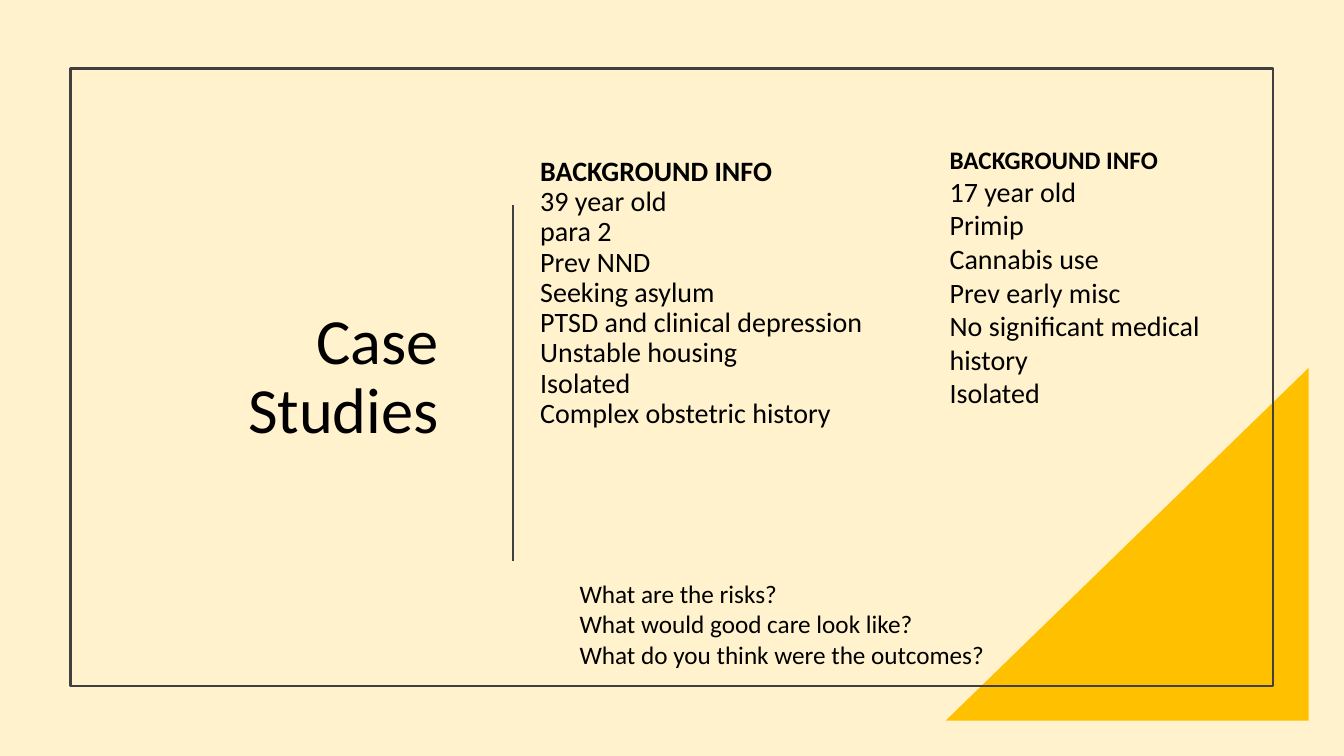
"""Build the Case Studies slide."""
from lxml.etree import SubElement
from pptx import Presentation
from pptx.dml.color import RGBColor
from pptx.enum.shapes import MSO_CONNECTOR, MSO_SHAPE
from pptx.enum.text import MSO_ANCHOR, PP_ALIGN
from pptx.oxml.ns import qn
from pptx.util import Inches, Pt

HUES = {"cream": "FFF2CC", "gold": "FFC000", "gray": "404040", "black": "000000"}
HUE = {name: RGBColor.from_string(code) for name, code in HUES.items()}

deck = Presentation()
deck.slide_width, deck.slide_height = Inches(13.33), Inches(7.5)
slide = deck.slides.add_slide(deck.slide_layouts[6])
slide.background.fill.solid()
slide.background.fill.fore_color.rgb = HUE["cream"]
shapes = slide.shapes


def add_text(lines, box, size, head=None, align=PP_ALIGN.LEFT,
             anchor=MSO_ANCHOR.TOP, space=1.0, before=0):
    """Write lines in one paragraph; head is the size of a bold first line."""
    frame = shapes.add_textbox(*map(Inches, box)).text_frame
    frame.word_wrap = True
    frame.vertical_anchor = anchor
    para = frame.paragraphs[0]
    para.alignment = align
    para.line_spacing = space
    para.space_before = Pt(before)
    for i, line in enumerate(lines):
        if i:
            para.add_line_break()
        bold = i == 0 and head is not None
        run = para.add_run()
        run.text = line
        run.font.name = "Calibri"
        run.font.size = Pt(head if bold else size)
        run.font.bold = bold
        run.font.color.rgb = HUE["black"]


corner = shapes.add_shape(MSO_SHAPE.RIGHT_TRIANGLE, Inches(9.38), Inches(3.65),
                          Inches(3.6), Inches(3.5))
corner.shadow.inherit = False
corner.fill.solid()
corner.fill.fore_color.rgb = HUE["gold"]
corner.line.fill.background()
corner._element.spPr.find(qn("a:xfrm")).set("flipH", "1")

border = shapes.add_shape(MSO_SHAPE.RECTANGLE, Inches(0.7), Inches(0.68),
                          Inches(11.93), Inches(6.13))
border.shadow.inherit = False
border.fill.background()

add_text(["Case Studies"], (1.18, 1.3, 3.27, 4.9), 46, align=PP_ALIGN.RIGHT,
         anchor=MSO_ANCHOR.MIDDLE, space=0.9)

rule = shapes.add_connector(MSO_CONNECTOR.STRAIGHT, Inches(5.09), Inches(2.03),
                            Inches(5.09), Inches(5.57))
for item in (border, rule):
    item.line.color.rgb = HUE["gray"]
    item.line.width = Pt(1.5)
SubElement(rule._element.spPr, qn("a:effectLst"))

add_text(["BACKGROUND INFO", "39 year old", "para 2", "Prev NND", "Seeking asylum",
          "PTSD and clinical depression", "Unstable housing", "Isolated",
          "Complex obstetric history"],
         (5.26, 0.69, 3.86, 4.44), 20, head=20, anchor=MSO_ANCHOR.MIDDLE,
         space=0.9, before=10)
add_text(["BACKGROUND INFO", "17 year old", "Primip", "Cannabis use",
          "Prev early misc", "No significant medical history", "Isolated"],
         (9.32, 1.38, 3, 2.76), 20, head=18)
add_text(["What are the risks?", "What would good care look like?",
          "What do you think were the outcomes?"],
         (5.65, 5.69, 6.67, 1.01), 18)

deck.save("out.pptx")
